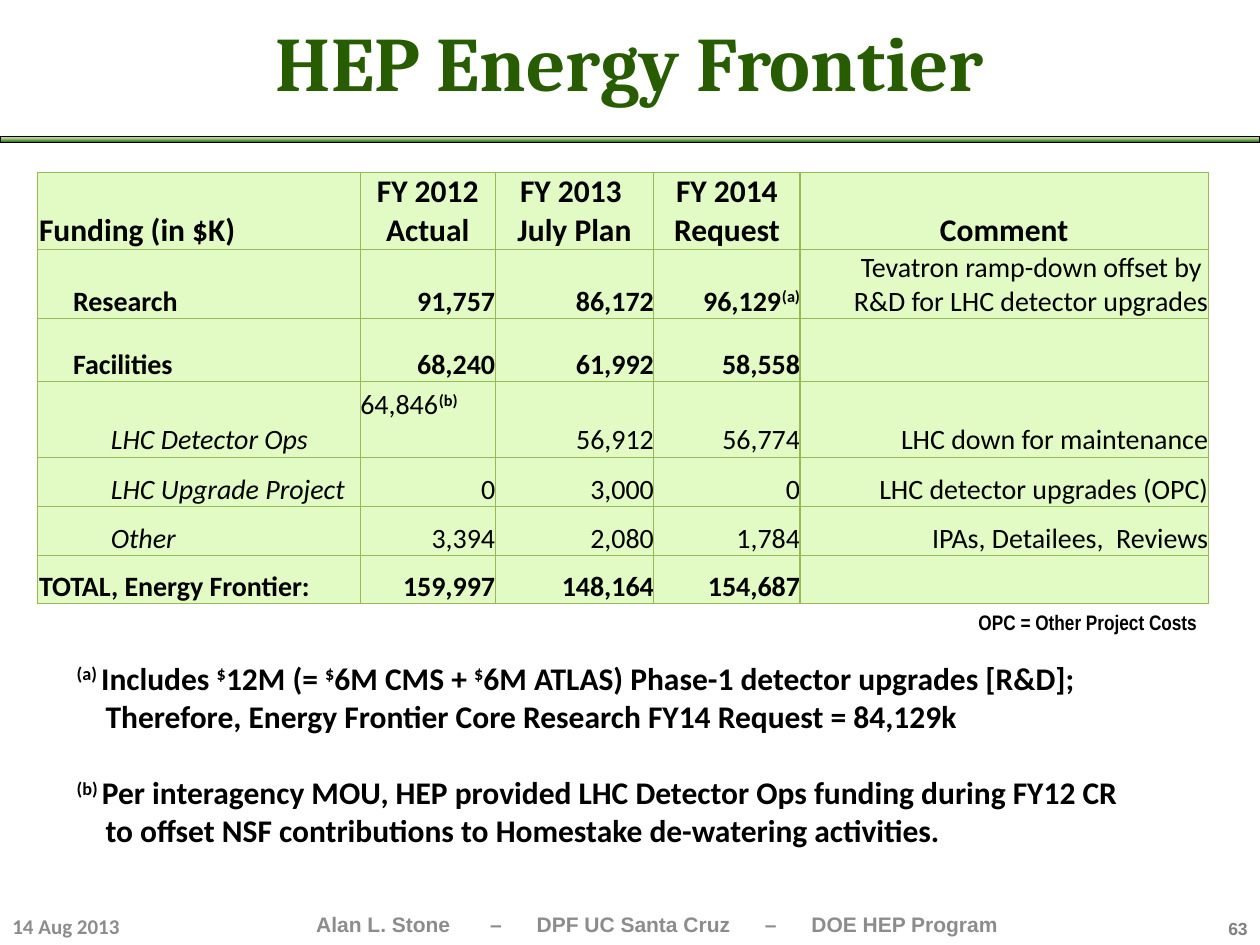
from pptx import Presentation
from pptx.dml.color import RGBColor
from pptx.enum.shapes import MSO_SHAPE
from pptx.enum.text import MSO_ANCHOR, PP_ALIGN
from pptx.oxml import parse_xml
from pptx.oxml.ns import nsdecls
from pptx.util import Inches, Pt

COLORS = {"title": "285C00", "text": "000000", "footer": "8C8C8C", "number": "808080",
          "cell": "E2FAC3", "border": "98B955",
          "bar_top": "DDEBCF", "bar_middle": "9CB86E", "bar_bottom": "156B13"}
LEFT, CENTER, RIGHT = PP_ALIGN.LEFT, PP_ALIGN.CENTER, PP_ALIGN.RIGHT
TOP, MIDDLE, BOTTOM = MSO_ANCHOR.TOP, MSO_ANCHOR.MIDDLE, MSO_ANCHOR.BOTTOM
THIN_GAP = (" ", {"size": Pt(2)})
BREAK = ("\n", {})


def sup(text):
    return text, {"baseline": 30000}


def fmt(size, bold=False, italic=False, name="Calibri", color="text"):
    return {"size": Pt(size), "bold": bold, "italic": italic, "name": name, "color": color}


class SlideBuilder:
    """Holds the style and the current slide, and adds each kind of element."""

    def __init__(self, prs):
        self.slide = prs.slides.add_slide(prs.slide_layouts[5])

    def paragraph(self, p, content, style, align=LEFT):
        p.alignment = align
        runs = [(content, {})] if isinstance(content, str) else content
        for text, extra in runs:
            if text == "\n":
                p.add_line_break()
                continue
            r = p.add_run()
            r.text = text
            for key, value in {**style, **extra}.items():
                if key == "color":
                    r.font.color.rgb = RGBColor.from_string(COLORS[value])
                elif key == "baseline":
                    r._r.get_or_add_rPr().set("baseline", str(value))
                else:
                    setattr(r.font, key, value)

    def fill_frame(self, tf, paragraphs, style, align=LEFT, space=0):
        for i, content in enumerate(paragraphs):
            p = tf.add_paragraph() if i else tf.paragraphs[0]
            if i and space:
                p.space_before = Pt(space)
            self.paragraph(p, content, style, align)

    def title(self, box, text, style):
        sp = self.slide.shapes.title
        sp.left, sp.top, sp.width, sp.height = map(Inches, box)
        sp.text_frame.vertical_anchor = MIDDLE
        self.fill_frame(sp.text_frame, [text], style, CENTER)

    def text(self, box, paragraphs, style, align=LEFT, anchor=TOP, wrap=True, space=0):
        tf = self.slide.shapes.add_textbox(*map(Inches, box)).text_frame
        tf.word_wrap, tf.vertical_anchor = wrap, anchor
        self.fill_frame(tf, paragraphs, style, align, space)
        return tf

    def tabs(self, p, stops):
        tabs = "".join(f'<a:tab pos="{Inches(x)}" algn="l"/>' for x in stops)
        p._p.get_or_add_pPr().append(parse_xml(f'<a:tabLst {nsdecls("a")}>{tabs}</a:tabLst>'))

    def hang(self, p, indent):
        pPr = p._p.get_or_add_pPr()
        pPr.set("marL", str(Inches(indent)))
        pPr.set("indent", str(-Inches(indent)))

    def bar(self, box, colors):
        sp = self.slide.shapes.add_shape(MSO_SHAPE.RECTANGLE, *map(Inches, box))
        sp.shadow.inherit = False
        stops = "".join(f'<a:gs pos="{i * 50000}"><a:srgbClr val="{COLORS[c]}"/></a:gs>'
                        for i, c in enumerate(colors))
        sp._element.spPr.insert(2, parse_xml(
            f'<a:gradFill {nsdecls("a")}><a:gsLst>{stops}</a:gsLst>'
            '<a:lin ang="5400000" scaled="0"/></a:gradFill>'))
        sp.line.color.rgb = RGBColor.from_string(COLORS["text"])
        sp.line.width = Pt(0.5)

    def table(self, left, top, widths, heights):
        shape = self.slide.shapes.add_table(
            len(heights), len(widths), Inches(left), Inches(top),
            Inches(sum(widths)), Inches(sum(heights)))
        table = shape.table
        for col, width in zip(table.columns, widths):
            col.width = Inches(width)
        for row, height in zip(table.rows, heights):
            row.height = Inches(height)
        return table

    def cell(self, cell, paragraphs, style, align, inset=0, level=0):
        tcPr = cell._tc.get_or_add_tcPr()
        for side in "LRTB":
            tcPr.append(parse_xml(
                f'<a:ln{side} {nsdecls("a")} w="{Pt(0.75)}"><a:solidFill>'
                f'<a:srgbClr val="{COLORS["border"]}"/></a:solidFill></a:ln{side}>'))
        cell.fill.solid()
        cell.fill.fore_color.rgb = RGBColor.from_string(COLORS["cell"])
        cell.margin_left = Inches(inset)
        cell.margin_right = cell.margin_top = cell.margin_bottom = 0
        cell.vertical_anchor = BOTTOM
        self.fill_frame(cell.text_frame, paragraphs, style, align)
        if level:
            pPr = cell.text_frame.paragraphs[0]._p.get_or_add_pPr()
            for key, value in {"lvl": level, "marL": Inches(0.3), "indent": 0}.items():
                pPr.set(key, str(value))


HEADERS = [["Funding (in $K)"], ["FY 2012 Actual"], ["FY 2013 ", "July Plan"],
           ["FY 2014 Request"], ["Comment"]]
ROWS = [
    ("group", "Research", "91,757", "86,172", [("96,129", {}), THIN_GAP, sup("(a)")],
     ["Tevatron ramp-down offset by ", "R&D for LHC detector upgrades"]),
    ("group", "Facilities", "68,240", "61,992", "58,558", []),
    ("item", "LHC Detector Ops",
     [("64,846", {}), THIN_GAP, ("(b)", {"baseline": 30000, "bold": True})],
     "56,912", "56,774", ["LHC down for maintenance"]),
    ("item", "LHC Upgrade Project", "0", "3,000", "0", ["LHC detector upgrades (OPC)"]),
    ("item", "Other", "3,394", "2,080", "1,784", ["IPAs, Detailees,  Reviews"]),
    ("total", "TOTAL, Energy Frontier:", "159,997", "148,164", "154,687", []),
]
NOTES = [
    [sup("(a) "), ("Includes ", {}), sup("$"), ("12M (= ", {}), sup("$"),
     ("6M CMS + ", {}), sup("$"), ("6M ATLAS) Phase-1 detector upgrades [R&D];", {}), BREAK,
     ("Therefore, Energy Frontier Core Research FY14 Request = 84,129k", {})],
    [sup("(b) "),
     ("Per interagency MOU, HEP provided LHC Detector Ops funding during FY12 CR", {}), BREAK,
     ("to offset NSF contributions to Homestake de-watering activities.", {})],
]


def funding_table(s):
    table = s.table(0.3, 1.37, [2.56, 1.07, 1.26, 1.16, 3.24],
                    [0.61, 0.55, 0.5, 0.6, 0.39, 0.39, 0.38])
    for col, lines in enumerate(HEADERS):
        s.cell(table.cell(0, col), lines, fmt(18, True), CENTER if col else LEFT,
               0 if col else 0.01)
    for row, (kind, label, *values, comment) in enumerate(ROWS, 1):
        item = kind == "item"
        s.cell(table.cell(row, 0), [label], fmt(16, not item, item), LEFT,
               0.01 if kind == "total" else 0.28, int(item))
        for col, value in enumerate(values, 1):
            s.cell(table.cell(row, col), [value], fmt(16, not item), RIGHT)
        s.cell(table.cell(row, 4), comment, fmt(16), RIGHT)
    raised = table.cell(3, 1)
    raised.vertical_anchor, raised.margin_top = TOP, Inches(0.05)
    raised.text_frame.paragraphs[0].alignment = LEFT


def main():
    prs = Presentation()
    prs.slide_width, prs.slide_height = Inches(10), Inches(7.5)
    s = SlideBuilder(prs)
    s.bar((0, 1.08, 10, 0.05), ["bar_top", "bar_middle", "bar_bottom"])
    s.title((0, 0.19, 10, 0.58), "HEP Energy Frontier",
            fmt(44, True, name="Cambria", color="title"))
    funding_table(s)
    notes = s.text((0.51, 5.18, 8.86, 1.92), NOTES, fmt(18, True), space=22)
    for p in notes.paragraphs:
        s.hang(p, 0.23)
    s.text((7.64, 4.79, 1.96, 0.3), ["OPC = Other Project Costs"],
           fmt(12, True, name="Arial Narrow"), RIGHT, wrap=False)
    s.text((0, 7.2, 1.07, 0.3), ["14 Aug 2013"], fmt(12, True, color="footer"), anchor=MIDDLE)
    footer = s.text((2.32, 7.17, 5.84, 0.33),
                    ["Alan L. Stone\t–\tDPF UC Santa Cruz\t–\tDOE HEP Program"],
                    fmt(12, True, name="Arial", color="footer"), anchor=MIDDLE)
    footer.margin_left = Inches(0.19)
    s.tabs(footer.paragraphs[0], [1.38, 1.75, 3.56, 3.93])
    s.text((9.59, 7.24, 0.41, 0.26), ["63"],
           fmt(10, True, name="Arial", color="number"), RIGHT)
    prs.save("out.pptx")


if __name__ == "__main__":
    main()
